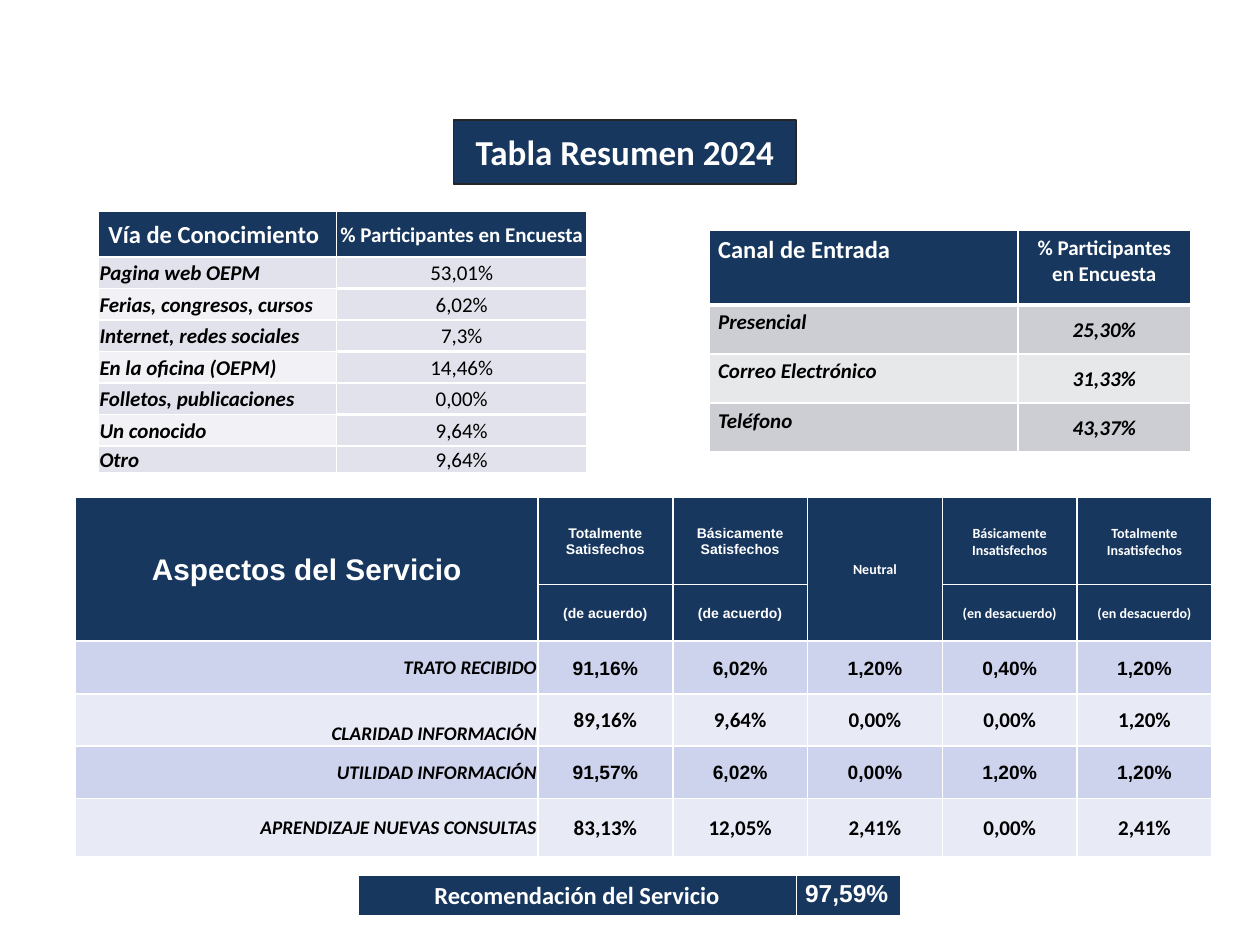
from dataclasses import dataclass, replace

import lxml.etree
import pptx
import pptx.dml.color
import pptx.enum.text
import pptx.oxml.ns
import pptx.util

Inches = pptx.util.Inches
Pt = pptx.util.Pt
ALIGN = pptx.enum.text.PP_ALIGN
ANCHOR = pptx.enum.text.MSO_ANCHOR
TIGHT = (0.01, 0.01, 0.01, 0)
ROOMY = (0.07, 0.04, 0.07, 0.04)


@dataclass(frozen=True)
class Theme:
    navy: str = "17375E"
    white: str = "FFFFFF"
    black: str = "000000"
    outline: str = "262626"
    lilac: tuple = ("E2E2EC", "F1F1F6")
    grey: tuple = ("CCCED3", "E7E8EA")
    blue: tuple = ("CDD3EC", "E8EAF6")
    title: float = 20
    aspects: float = 17
    heading: float = 14
    body: float = 12
    small: float = 11
    scale: float = 8


THEME = Theme()


@dataclass(frozen=True)
class TextStyle:
    size: float = THEME.body
    font: str = "Calibri"
    color: str = THEME.black
    bold: bool = True
    italic: bool = False
    align: ALIGN = ALIGN.CENTER
    anchor: ANCHOR = ANCHOR.MIDDLE
    margins: tuple = TIGHT


def rgb(value):
    return pptx.dml.color.RGBColor.from_string(value)


class SlideBuilder:
    """Holds the theme and the current slide."""

    def __init__(self, slide, theme):
        self.slide = slide
        self.theme = theme

    def format_text(self, frame, style):
        for paragraph in frame.paragraphs:
            paragraph.alignment = style.align
            for run in paragraph.runs:
                run.font.size = Pt(style.size)
                run.font.name = style.font
                run.font.bold = style.bold
                run.font.italic = style.italic
                run.font.color.rgb = rgb(style.color)

    def add_title(self, text, left, top, width, height, style):
        title = self.slide.shapes.title
        title.left, title.top = Inches(left), Inches(top)
        title.width, title.height = Inches(width), Inches(height)
        title.fill.solid()
        title.fill.fore_color.rgb = rgb(self.theme.navy)
        title.line.color.rgb = rgb(self.theme.outline)
        title.line.width = Pt(1)
        frame = title.text_frame
        frame.text = text
        frame.vertical_anchor = style.anchor
        (frame.margin_left, frame.margin_top, frame.margin_right,
         frame.margin_bottom) = map(Inches, style.margins)
        self.format_text(frame, style)

    def add_border(self, cell, side, width):
        properties = cell._tc.get_or_add_tcPr()
        line = lxml.etree.SubElement(
            properties, pptx.oxml.ns.qn(f"a:ln{side}"), w=str(Pt(width)))
        fill = lxml.etree.SubElement(line, pptx.oxml.ns.qn("a:solidFill"))
        lxml.etree.SubElement(
            fill, pptx.oxml.ns.qn("a:srgbClr"), val=self.theme.white)

    def add_table(self, left, top, widths, heights, rows, bands=(),
                  header_rows=1, rules=None, merges=()):
        """rows holds (text, style) pairs; rules maps (row, column) to the
        width of the line below that cell."""
        rules = rules or {}
        table = self.slide.shapes.add_table(
            len(heights), len(widths), Inches(left), Inches(top),
            Inches(sum(widths)), Inches(sum(heights))).table
        table.first_row = table.horz_banding = False
        for column, width in zip(table.columns, widths):
            column.width = Inches(width)
        for row, height in zip(table.rows, heights):
            row.height = Inches(height)
        for r, row in enumerate(rows):
            for c, (text, style) in enumerate(row):
                fill = (self.theme.navy if r < header_rows
                        else bands[c][(r - header_rows) % 2])
                self.format_cell(table.cell(r, c), text, style, fill,
                                 rules.get((r - 1, c), 1), rules.get((r, c), 1))
        for first, last in merges:
            table.cell(*first).merge(table.cell(*last))

    def format_cell(self, cell, text, style, fill, above, below):
        for side, width in (("L", 1), ("R", 1), ("T", above), ("B", below)):
            self.add_border(cell, side, width)
        cell.fill.solid()
        cell.fill.fore_color.rgb = rgb(fill)
        cell.vertical_anchor = style.anchor
        (cell.margin_left, cell.margin_top, cell.margin_right,
         cell.margin_bottom) = map(Inches, style.margins)
        if text:
            cell.text_frame.text = text
            self.format_text(cell.text_frame, style)


def main():
    presentation = pptx.Presentation()
    presentation.slide_width, presentation.slide_height = Inches(10), Inches(7.5)
    slide = presentation.slides.add_slide(presentation.slide_layouts[5])
    builder = SlideBuilder(slide, THEME)

    header = TextStyle(color=THEME.white)
    heading = replace(header, size=THEME.heading, margins=ROOMY, anchor=ANCHOR.TOP)
    label = TextStyle(italic=True, align=ALIGN.LEFT)

    # Title
    builder.add_title("Tabla Resumen 2024", 3.6, 0.95, 2.72, 0.51,
                      replace(header, size=THEME.title, margins=ROOMY))

    # How participants heard of the service
    share = TextStyle(bold=False)
    sources = [("Pagina web OEPM", "53,01%"), ("Ferias, congresos, cursos", "6,02%"),
               ("Internet, redes sociales", "7,3%"), ("En la oficina (OEPM)", "14,46%"),
               ("Folletos, publicaciones", "0,00%"), ("Un conocido", "9,64%"),
               ("Otro", "9,64%")]
    source_heading = replace(heading, align=ALIGN.LEFT, anchor=ANCHOR.MIDDLE,
                             margins=(0.08, 0.01, 0.01, 0))
    builder.add_table(
        0.78, 1.68, [1.89, 1.99], [0.36] + [0.25] * 6 + [0.18],
        [[("Vía de Conocimiento", source_heading),
          ("% Participantes en Encuesta", header)]]
        + [[(name, label), (value, share)] for name, value in sources],
        bands=[THEME.lilac, THEME.lilac[:1] * 2],
        rules={(0, 0): 1.5, **{(r, 1): 1.5 for r in range(7)}})

    # Entry channel
    channels = [("Presencial", "25,30%"), ("Correo Electrónico", "31,33%"),
                ("Teléfono", "43,37%")]
    channel_label = replace(label, margins=ROOMY, anchor=ANCHOR.TOP)
    channel_share = replace(label, align=ALIGN.CENTER)
    builder.add_table(
        5.63, 1.83, [2.45, 1.37], [0.59] + [0.39] * 3,
        [[("Canal de Entrada", replace(heading, align=ALIGN.LEFT)),
          ("% Participantes en Encuesta", replace(heading, size=THEME.body))]]
        + [[(name, channel_label), (value, channel_share)]
           for name, value in channels],
        bands=[THEME.grey] * 2, rules={(0, 0): 3, (0, 1): 3})

    # Recommendation of the service
    builder.add_table(
        2.84, 6.95, [3.48, 0.83], [0.3],
        [[("Recomendación del Servicio", heading),
          ("97,59%", replace(heading, font="Arial", align=ALIGN.LEFT))]])

    # Satisfaction with each aspect of the service
    scale = replace(header, size=THEME.scale)
    scale_arial = replace(scale, font="Arial")
    aspects_heading = replace(scale_arial, size=THEME.aspects)
    scale_styles = [aspects_heading, scale_arial, scale_arial, scale, scale, scale]
    levels = ["Aspectos del Servicio", "Totalmente Satisfechos",
              "Básicamente Satisfechos", "Neutral", "Básicamente Insatisfechos",
              "Totalmente Insatisfechos"]
    meanings = ["", "(de acuerdo)", "(de acuerdo)", "",
                "(en desacuerdo)", "(en desacuerdo)"]
    aspect = replace(label, size=THEME.small, align=ALIGN.RIGHT)
    score = TextStyle()
    score_arial = TextStyle(size=THEME.small, font="Arial")
    ratings = [
        ("TRATO RECIBIDO", aspect, score_arial,
         ["91,16%", "6,02%", "1,20%", "0,40%", "1,20%"]),
        ("CLARIDAD INFORMACIÓN", replace(aspect, anchor=ANCHOR.BOTTOM), score,
         ["89,16%", "9,64%", "0,00%", "0,00%", "1,20%"]),
        ("UTILIDAD INFORMACIÓN", aspect, score_arial,
         ["91,57%", "6,02%", "0,00%", "1,20%", "1,20%"]),
        ("APRENDIZAJE NUEVAS CONSULTAS", aspect, score,
         ["83,13%", "12,05%", "2,41%", "0,00%", "2,41%"])]
    builder.add_table(
        0.6, 3.95, [3.67] + [1.07] * 5, [0.69, 0.45, 0.42, 0.41, 0.42, 0.46],
        [list(zip(levels, scale_styles)), list(zip(meanings, scale_styles))]
        + [[(name, name_style)] + [(value, value_style) for value in values]
           for name, name_style, value_style, values in ratings],
        bands=[THEME.blue] * 6, header_rows=2,
        rules={(0, 0): 1.5, (0, 3): 1.5, **{(1, c): 1.5 for c in range(6)},
               **{(3, c): 1.5 for c in range(1, 6)}},
        merges=[((0, 0), (1, 0)), ((0, 3), (1, 3))])

    presentation.save("out.pptx")


if __name__ == "__main__":
    main()
